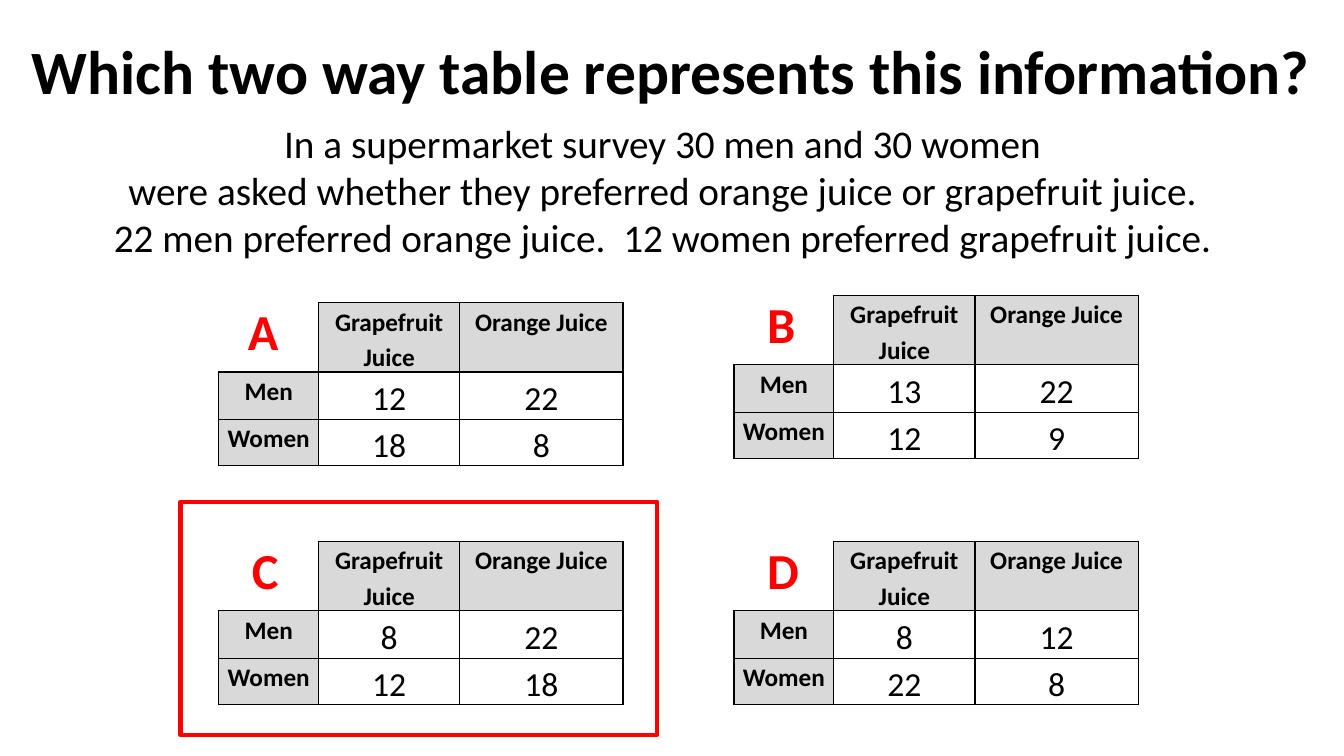
from pptx import Presentation, util as u
from pptx.dml.color import RGBColor
from pptx.enum import shapes, text
from pptx.oxml import parse_xml
from pptx.oxml.ns import nsdecls

PX = 9144  # EMU per px, 100 px to the inch
BLACK = RGBColor(0, 0, 0)
RED = RGBColor(0xFF, 0, 0)
GREY = RGBColor(0xD9, 0xD9, 0xD9)

COLUMN_WIDTHS = (99, 140, 162)
ROW_HEIGHTS = (60, 47, 42)
JUICES = ("Grapefruit Juice", "Orange Juice")

QUESTION = "Which two way table represents this information?"
SURVEY = (
    "In a supermarket survey 30 men and 30 women",
    "were asked whether they preferred orange juice or grapefruit juice.",
    "22 men preferred orange juice.  12 women preferred grapefruit juice.",
)

# letter, letter left, table left, table top, men, women
OPTIONS = (
    ("A", 236, 217, 300, (12, 22), (18, 8)),
    ("B", 751, 728, 293, (13, 22), (12, 9)),
    ("C", 240, 217, 537, (8, 22), (12, 18)),
    ("D", 751, 728, 537, (8, 12), (22, 8)),
)


def px(*lengths):
    return [u.Emu(length * PX) for length in lengths]


class QuizSlide:
    font = "Calibri"

    def __init__(self, deck):
        self.slide = deck.slides.add_slide(deck.slide_layouts[1])
        self.shapes = self.slide.shapes

    def style(self, paragraph, size, bold=False, color=BLACK,
              align=text.PP_ALIGN.CENTER, spacing=1.0):
        paragraph.alignment = align
        paragraph.line_spacing = spacing
        paragraph.space_before = u.Pt(0)
        paragraph.font.name = self.font
        paragraph.font.size = u.Pt(size)
        paragraph.font.bold = bold
        paragraph.font.color.rgb = color

    def place(self, holder, box):
        holder.left, holder.top, holder.width, holder.height = px(*box)
        holder.text_frame.auto_size = text.MSO_AUTO_SIZE.NONE
        return holder.text_frame

    def title(self, words, box):
        frame = self.place(self.shapes.title, box)
        frame.text = words
        self.style(frame.paragraphs[0], 44, bold=True, spacing=0.9)

    def body(self, lines, box):
        frame = self.place(self.slide.placeholders[1], box)
        frame.text = "\n".join(lines)
        for line in frame.paragraphs:
            properties = line._p.get_or_add_pPr()
            properties.set("marL", "0")
            properties.set("indent", "0")
            properties.append(parse_xml(f"<a:buNone {nsdecls('a')}/>"))
            self.style(line, 28)

    def letter(self, words, left, top):
        frame = self.shapes.add_textbox(*px(left, top, 50, 71)).text_frame
        frame.word_wrap = False
        frame.text = words
        self.style(frame.paragraphs[0], 36, bold=True, color=RED,
                   align=text.PP_ALIGN.LEFT)

    def borders(self, cell, sides):
        """Draw 1 pt black lines; sides holds letters out of LRTB, in that order."""
        for side in sides:
            cell._tc.get_or_add_tcPr().append(parse_xml(
                f'<a:ln{side} {nsdecls("a")} w="12700"><a:solidFill>'
                f'<a:srgbClr val="{BLACK}"/></a:solidFill></a:ln{side}>'))

    def cell(self, cell, words, heading):
        self.borders(cell, "LRTB")
        cell.margin_left = cell.margin_right = u.Inches(0.07)
        cell.margin_top = cell.margin_bottom = 0
        cell.text = str(words)
        self.style(cell.text_frame.paragraphs[0], 18 if heading else 24,
                   bold=heading, spacing=1.15)
        if heading:
            cell.fill.solid()
            cell.fill.fore_color.rgb = GREY
        else:
            cell.fill.background()
            cell.vertical_anchor = text.MSO_ANCHOR.MIDDLE

    def two_way_table(self, left, top, men, women):
        rows = (("", *JUICES), ("Men", *men), ("Women", *women))
        box = px(left, top, sum(COLUMN_WIDTHS), sum(ROW_HEIGHTS))
        table = self.shapes.add_table(3, 3, *box).table
        table.first_row = table.horz_banding = False
        for column, width in zip(table.columns, px(*COLUMN_WIDTHS)):
            column.width = width
        for row, height in zip(table.rows, px(*ROW_HEIGHTS)):
            row.height = height
        for r, row in enumerate(rows):
            for c, words in enumerate(row):
                if r or c:
                    self.cell(table.cell(r, c), words, heading=not (r and c))
        corner = table.cell(0, 0)
        self.borders(corner, "RB")
        corner.fill.background()

    def answer_frame(self, box):
        frame = self.shapes.add_shape(shapes.MSO_SHAPE.RECTANGLE, *px(*box))
        frame.shadow.inherit = False
        frame.fill.background()
        frame.line.color.rgb = RED
        frame.line.width = u.Pt(3)


def main():
    deck = Presentation()
    deck.slide_width, deck.slide_height = px(1333, 750)
    quiz = QuizSlide(deck)
    quiz.title(QUESTION, (16, 35, 1300, 77))
    quiz.body(SURVEY, (31, 113, 1252, 151))
    for letter, letter_left, left, top, men, women in OPTIONS:
        quiz.letter(letter, letter_left, top - 7)
        quiz.two_way_table(left, top, men, women)
    quiz.answer_frame((179, 498, 473, 231))
    deck.save("out.pptx")


if __name__ == "__main__":
    main()
